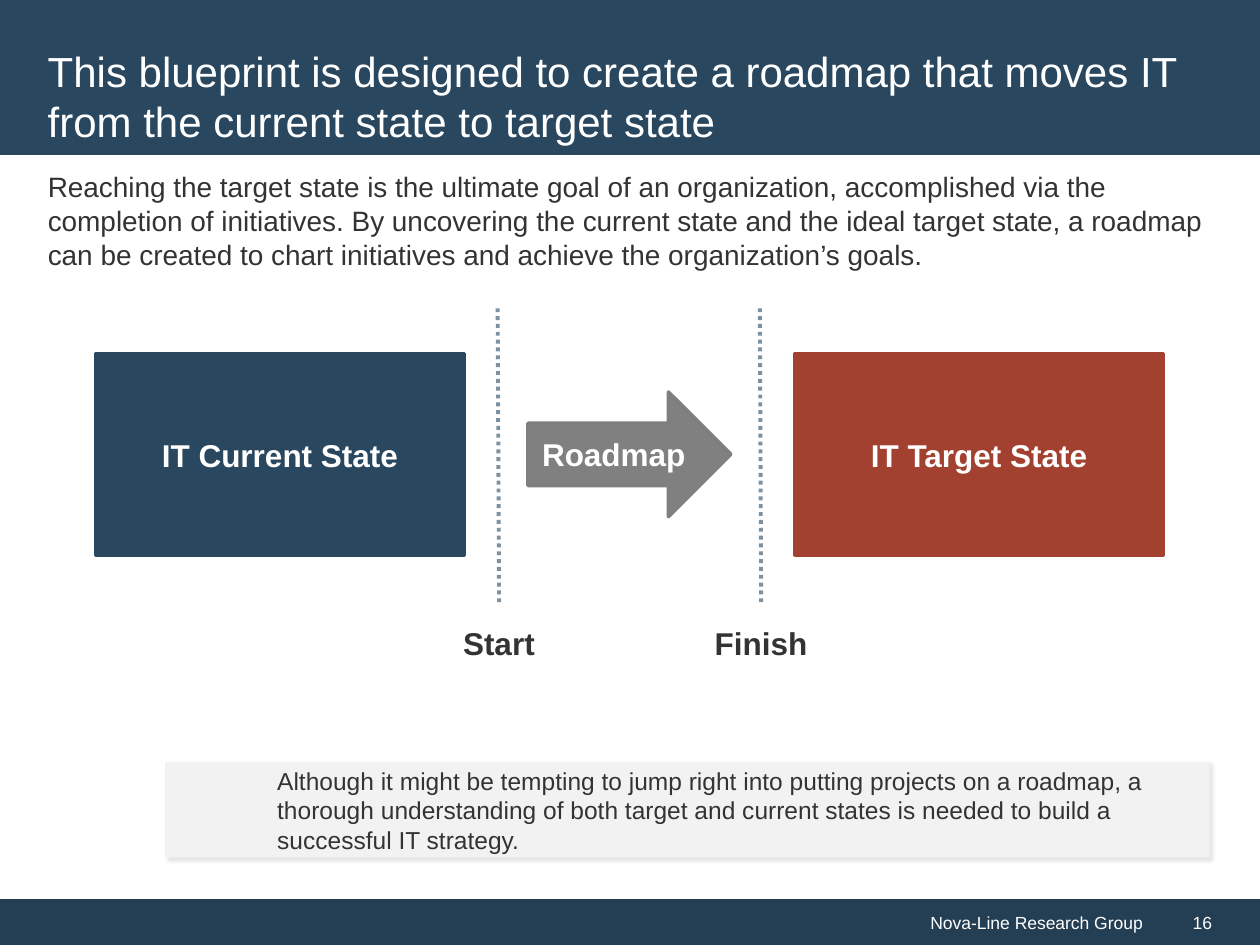
from lxml import etree
from pptx import Presentation
from pptx.dml.color import RGBColor
from pptx.enum import dml, shapes, text
from pptx.oxml import ns
from pptx.util import Pt

COLORS = {
    "navy": "29475F",
    "footer": "243F54",
    "red": "A24130",
    "arrow": "808080",
    "arrow_edge": "7F7F7F",
    "divider": "7F919F",
    "note": "F2F2F2",
    "ink": "333333",
    "white": "FFFFFF",
    "shadow": "000000",
}
RECTANGLE = shapes.MSO_SHAPE.RECTANGLE
ARROW = shapes.MSO_SHAPE.RIGHT_ARROW
LEFT, CENTER, RIGHT = text.PP_ALIGN.LEFT, text.PP_ALIGN.CENTER, text.PP_ALIGN.RIGHT
TOP, MIDDLE = text.MSO_ANCHOR.TOP, text.MSO_ANCHOR.MIDDLE


def color(name):
    return RGBColor.from_string(COLORS[name])


def write_text(shape, words, size=18, fill="white", bold=False, align=CENTER,
               anchor=MIDDLE, indent=0):
    frame = shape.text_frame
    frame.word_wrap = True
    frame.vertical_anchor = anchor
    paragraph = frame.paragraphs[0]
    paragraph.alignment = align
    if indent:
        properties = paragraph._p.get_or_add_pPr()
        properties.set("marL", str(Pt(indent)))
        properties.set("indent", "0")
    run = paragraph.add_run()
    run.text = words
    run.font.name = "Arial"
    run.font.size = Pt(size)
    run.font.bold = bold
    run.font.color.rgb = color(fill)


def add_block(slide, box, fill, edge=None, kind=RECTANGLE):
    shape = slide.shapes.add_shape(kind, *map(Pt, box))
    shape.shadow.inherit = False
    shape.fill.solid()
    shape.fill.fore_color.rgb = color(fill)
    if edge:
        shape.line.color.rgb = color(edge)
        shape.line.width = Pt(2)
    else:
        shape.line.fill.background()
    return shape


def add_label(slide, box, words, **style):
    write_text(slide.shapes.add_textbox(*map(Pt, box)), words, **style)


def add_divider(slide, x, top, bottom):
    line = slide.shapes.add_connector(
        shapes.MSO_CONNECTOR.STRAIGHT, Pt(x), Pt(top), Pt(x + 0.8), Pt(bottom))
    line.line.color.rgb = color("divider")
    line.line.width = Pt(2.25)
    line.line.dash_style = dml.MSO_LINE.ROUND_DOT
    etree.SubElement(line._element.spPr, ns.qn("a:effectLst"))


def add_soft_shadow(shape):
    effects = shape._element.spPr.find(ns.qn("a:effectLst"))
    shadow = etree.SubElement(
        effects, ns.qn("a:outerShdw"), blurRad=str(Pt(2)), dist=str(Pt(2)),
        dir=str(45 * 60000), algn="tl", rotWithShape="0")
    tint = etree.SubElement(shadow, ns.qn("a:srgbClr"), val=COLORS["shadow"])
    etree.SubElement(tint, ns.qn("a:alpha"), val="10000")


def add_header_and_footer(slide):
    publisher = add_block(slide, (0, 513.8, 660, 26.2), "footer")
    write_text(publisher, "Nova-Line Research Group", size=10, align=RIGHT, indent=21)
    number = add_block(slide, (660, 513.8, 60, 26.2), "footer")
    write_text(number, "16", size=10, align=LEFT, indent=14.4)
    add_block(slide, (0, 0, 720, 88.6), "navy")
    add_label(slide, (20.2, 20.2, 679, 69),
              "This blueprint is designed to create a roadmap that moves IT "
              "from the current state to target state", size=24, align=LEFT)


def add_roadmap(slide):
    for x, fill, words in ((54.5, "navy", "IT Current State"),
                           (454, "red", "IT Target State")):
        state = add_block(slide, (x, 202, 211, 115.5), fill, edge=fill)
        write_text(state, words, bold=True)
    arrow = add_block(slide, (301.7, 224, 116, 71.3), "arrow",
                      edge="arrow_edge", kind=ARROW)
    write_text(arrow, "Roadmap", bold=True)
    for x, words in ((284.4, "Start"), (434.2, "Finish")):
        add_divider(slide, x, 176.2, 346.3)
        add_label(slide, (x + 0.7 - 69, 353, 138, 29), words, fill="ink",
                  bold=True, anchor=TOP)


def main():
    presentation = Presentation()
    presentation.slide_width, presentation.slide_height = Pt(720), Pt(540)
    slide = presentation.slides.add_slide(presentation.slide_layouts[6])
    add_header_and_footer(slide)
    add_roadmap(slide)
    add_label(slide, (20.2, 93.6, 680, 70),
              "Reaching the target state is the ultimate goal of an organization, "
              "accomplished via the completion of initiatives. By uncovering the "
              "current state and the ideal target state, a roadmap can be created "
              "to chart initiatives and achieve the organization’s goals.",
              size=16, fill="ink", align=LEFT, anchor=TOP)
    note = add_block(slide, (94.3, 435.5, 597, 54.7), "note")
    add_soft_shadow(note)
    write_text(note,
               "Although it might be tempting to jump right into putting projects "
               "on a roadmap, a thorough understanding of both target and current "
               "states is needed to build a successful IT strategy.",
               size=14, fill="ink", align=LEFT, indent=57)
    presentation.save("out.pptx")


if __name__ == "__main__":
    main()
